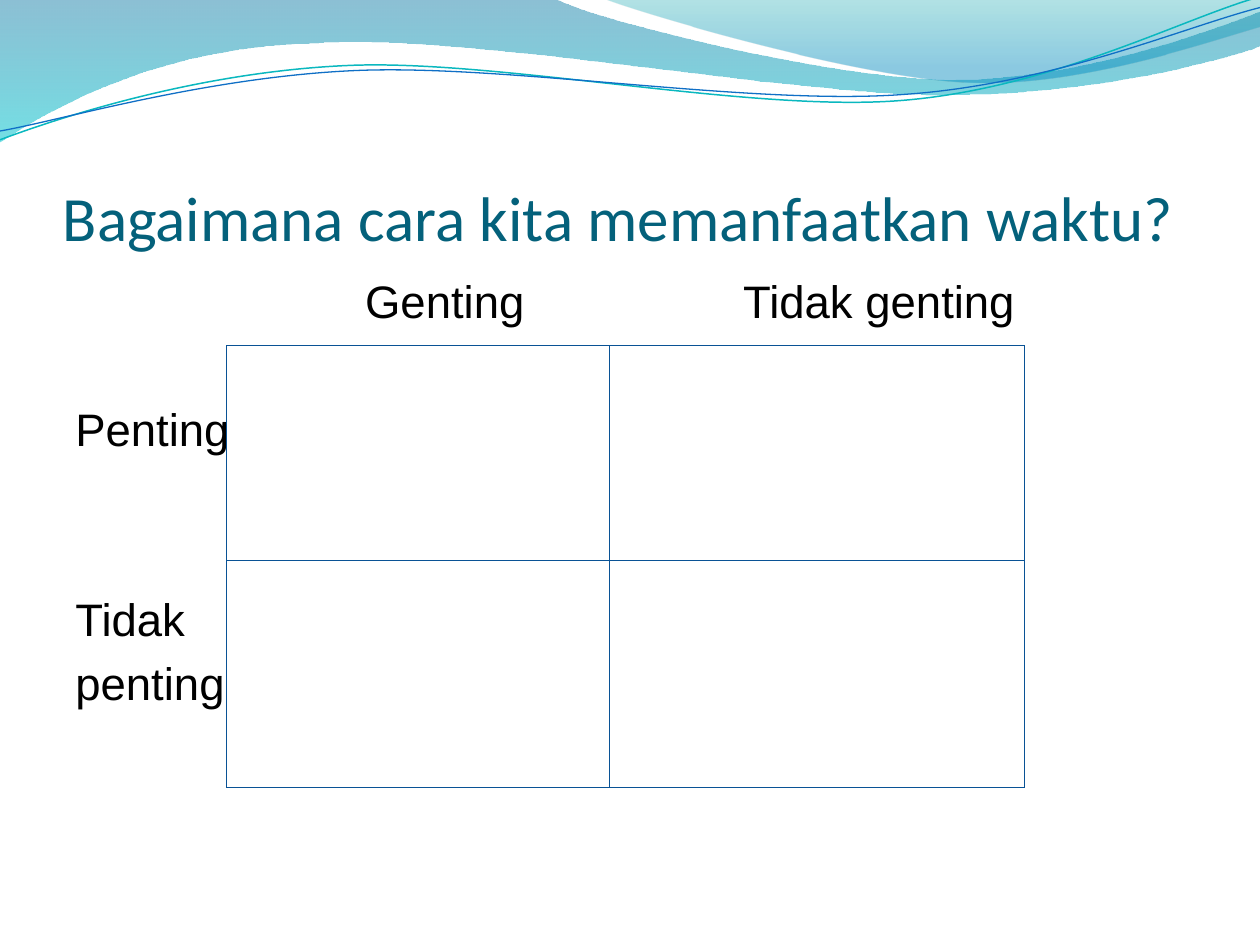
from pptx import Presentation
from pptx.dml.color import RGBColor
from pptx.enum.shapes import MSO_CONNECTOR
from pptx.enum.text import MSO_ANCHOR
from pptx.oxml.ns import qn
from pptx.util import Inches, Pt
from lxml.etree import SubElement

# Content: each label line with the rows it lies below the line before
TITLE = "Bagaimana cara kita memanfaatkan waktu?"
LABELS = [
    ("\tGenting\tTidak genting", 0),
    ("Penting", 2),
    ("Tidak", 3),
    ("penting", 1),
]
TITLE_BOX = (0.5, 0.77, 9, 1.25)
LABEL_BOX = (0.5, 2.12, 9, 4.8)
LABEL_TABS = [2.3, 5.3]
COLUMN_EDGES = [1.8, 4.84, 8.13]
ROW_EDGES = [2.74, 4.45, 6.25]

THEME = {
    "title": ("Calibri", 36, "04617B"),
    "label": ("Arial", 26, "000000"),
    "row_pitch": 36.3,
    "line_height": 31,
    "grid": ("095295", 0.75),
    # Gradient stops: position, colour, opacity
    "wide_wave": [(0, "0074A1", 45), (1, "00C6CF", 55)],
    "corner_wave": [(0, "00A1A9", 30), (0.8, "008BBF", 45)],
    "teal_line": ("0AB8BF", 0.85),
    "blue_line": ("0F6FC6", 0.75),
}

# Wave outlines: a pair is a straight step, six numbers are a Bezier step
FILLED_WAVES = [
    ("wide_wave", [
        (0, 0), (4.4, -0.01), (4.76, 0.17, 6.64, 0.63, 7.58, 0.63),
        (8.53, 0.63, 9.58, 0.26, 10, 0.09), (10.01, 0.36),
        (9.83, 0.44, 8.7, 0.76, 7.46, 0.75),
        (6.22, 0.75, 3.82, 0.28, 2.57, 0.34),
        (1.29, 0.36, 0.46, 0.83, -0.01, 1.13)]),
    ("corner_wave", [
        (4.79, -0.01), (5.09, 0.11, 6.82, 0.62, 7.69, 0.65),
        (8.56, 0.69, 9.61, 0.32, 10, 0.21), (10, 0)]),
]
LINE_WAVES = [
    ("teal_line", [
        (0, 1.11), (0.48, 0.93, 1.58, 0.57, 2.77, 0.52),
        (3.95, 0.47, 5.93, 0.89, 7.13, 0.8),
        (8.33, 0.71, 9.38, 0.15, 9.98, -0.02)]),
    ("blue_line", [
        (0, 1.04), (0.47, 0.96, 1.64, 0.61, 2.83, 0.56),
        (4.03, 0.51, 5.97, 0.84, 7.17, 0.75),
        (8.36, 0.67, 9.41, 0.21, 10, 0.06)]),
]


def add_wave(slide, steps, close):
    """Join the step ends, then bend the Bezier steps."""
    first, *rest = [tuple(map(Inches, step[-2:])) for step in steps]
    builder = slide.shapes.build_freeform(*first, scale=1.0)
    builder.add_line_segments(rest, close=close)
    wave = builder.convert_to_shape()
    wave.shadow.inherit = False
    segments = list(wave._element.spPr.iter(qn("a:lnTo")))
    for segment, step in zip(segments, steps[1:]):
        if len(step) == 2:
            continue
        segment.tag = qn("a:cubicBezTo")
        for point in list(segment):
            segment.remove(point)
        for x, y in zip(step[::2], step[1::2]):
            point = SubElement(segment, qn("a:pt"))
            point.set("x", str(Inches(x) - wave.left))
            point.set("y", str(Inches(y) - wave.top))
    return wave


def fill_gradient(shape, stops):
    shape.fill.gradient()
    shape.fill.gradient_angle = 270
    for stop, (position, colour, _) in zip(shape.fill.gradient_stops, stops):
        stop.position = position
        stop.color.rgb = RGBColor.from_string(colour)
    colours = shape._element.spPr.iter(qn("a:srgbClr"))
    for colour, (_, _, opacity) in zip(colours, stops):
        SubElement(colour, qn("a:alpha")).set("val", str(opacity * 1000))


def style_line(line, style):
    colour, width = style
    line.color.rgb = RGBColor.from_string(colour)
    line.width = Pt(width)


def add_frame(slide, box):
    frame = slide.shapes.add_textbox(*map(Inches, box)).text_frame
    frame.word_wrap = True
    return frame


def add_run(paragraph, text, style):
    font_name, size, colour = style
    run = paragraph.add_run()
    run.text = text
    run.font.name = font_name
    run.font.size = Pt(size)
    run.font.color.rgb = RGBColor.from_string(colour)


def add_grid_line(slide, *ends):
    line = slide.shapes.add_connector(MSO_CONNECTOR.STRAIGHT, *map(Inches, ends))
    style_line(line.line, THEME["grid"])
    SubElement(line._element.spPr, qn("a:effectLst"))


def main():
    deck = Presentation()
    deck.slide_width, deck.slide_height = Inches(10), Inches(7.5)
    slide = deck.slides.add_slide(deck.slide_layouts[6])

    # Waves along the top
    for name, steps in FILLED_WAVES:
        wave = add_wave(slide, steps, close=True)
        fill_gradient(wave, THEME[name])
        wave.line.fill.background()
    for name, steps in LINE_WAVES:
        wave = add_wave(slide, steps, close=False)
        wave.fill.background()
        style_line(wave.line, THEME[name])

    # Title
    title = add_frame(slide, TITLE_BOX)
    title.vertical_anchor = MSO_ANCHOR.BOTTOM
    title.margin_left = title.margin_right = title.margin_bottom = 0
    add_run(title.paragraphs[0], TITLE, THEME["title"])

    # Matrix labels
    labels = add_frame(slide, LABEL_BOX)
    for i, (text, rows) in enumerate(LABELS):
        paragraph = labels.add_paragraph() if i else labels.paragraphs[0]
        if rows:
            gap = rows * THEME["row_pitch"] - THEME["line_height"]
            paragraph.space_before = Pt(gap)
        add_run(paragraph, text, THEME["label"])
    tabs = SubElement(labels.paragraphs[0]._p.get_or_add_pPr(), qn("a:tabLst"))
    for position in LABEL_TABS:
        tab = SubElement(tabs, qn("a:tab"))
        tab.set("pos", str(Inches(position)))
        tab.set("algn", "l")

    # Matrix of two by two
    for y in ROW_EDGES:
        add_grid_line(slide, COLUMN_EDGES[0], y, COLUMN_EDGES[-1], y)
    for x in COLUMN_EDGES:
        add_grid_line(slide, x, ROW_EDGES[0], x, ROW_EDGES[-1])

    deck.save("out.pptx")


if __name__ == "__main__":
    main()
